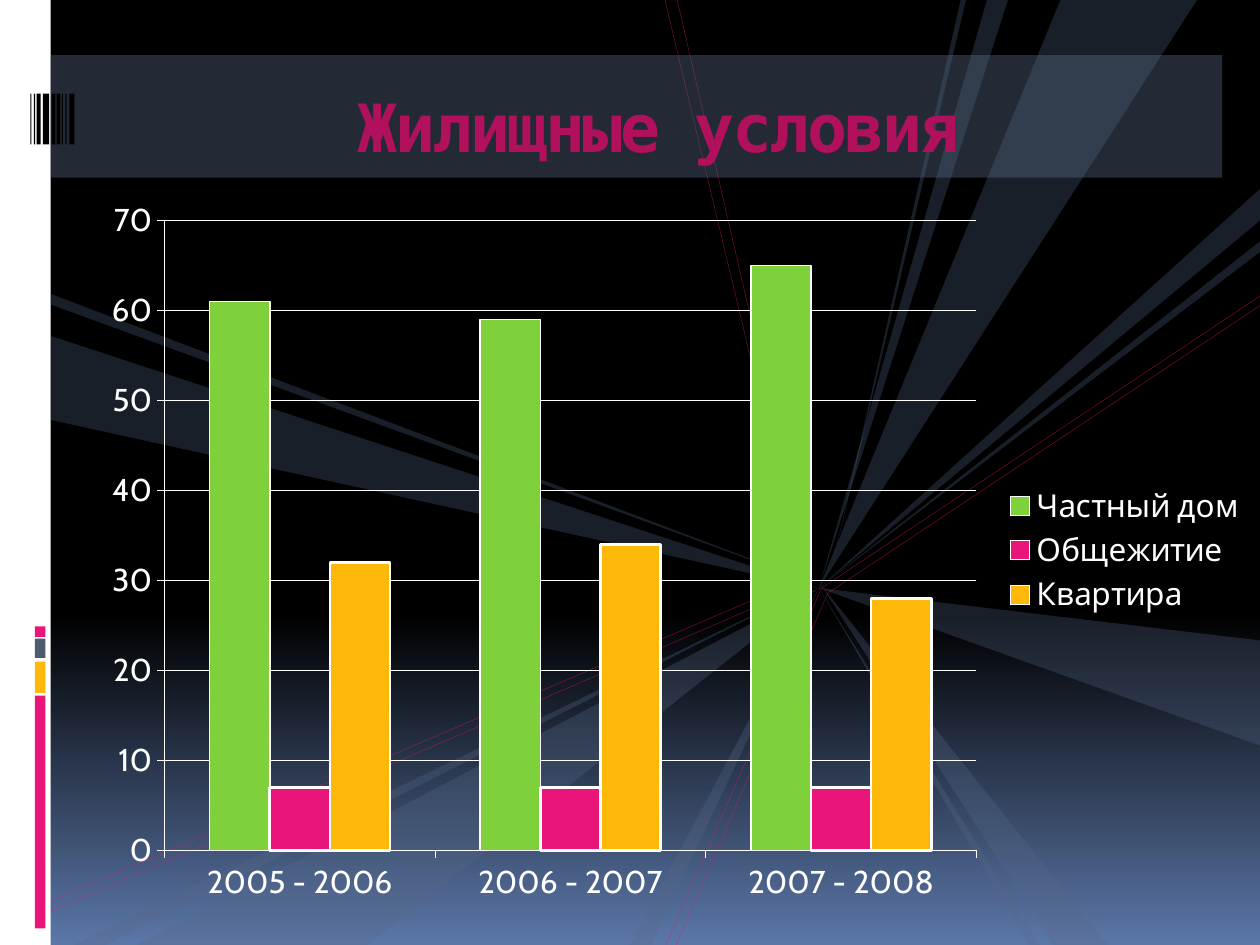
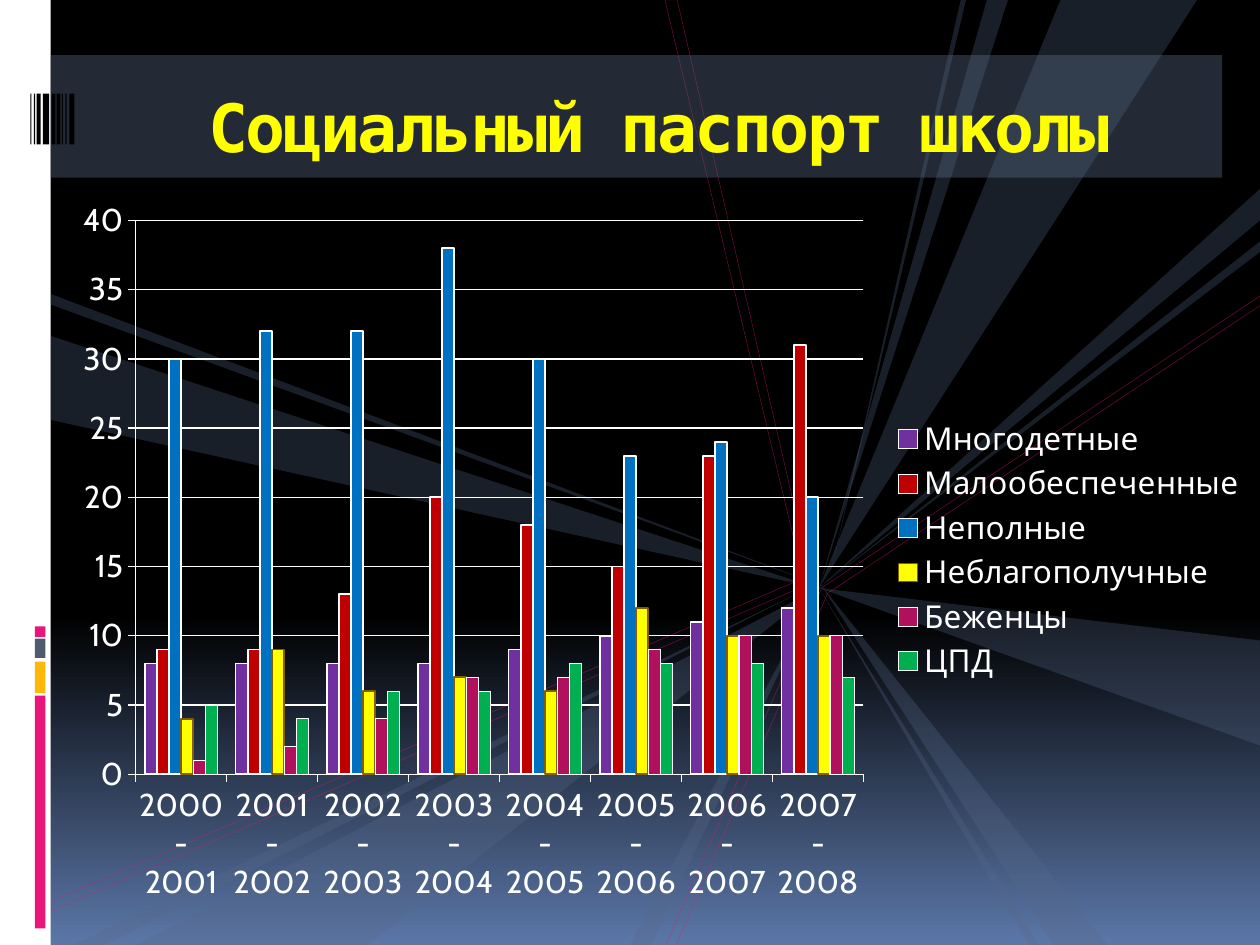
from copy import deepcopy

from pptx import Presentation
from pptx.chart.data import CategoryChartData
from pptx.dml.color import RGBColor
from pptx.enum.chart import XL_CHART_TYPE, XL_LEGEND_POSITION, XL_TICK_MARK
from pptx.enum.shapes import MSO_SHAPE
from pptx.enum.text import MSO_ANCHOR, PP_ALIGN
from pptx.oxml import parse_xml
from pptx.oxml.ns import nsdecls, qn
from pptx.util import Pt

WHITE, BLACK, PINK, AMBER = "FFFFFF", "000000", "EA157A", "FEB80A"
SLATE, SKY, RAY, BAND = "4E5B6F", "5B77A8", "566989", "586A86"
BERRY, YELLOW = "B0105C", "FFFF00"
CENTRE = (468, 336)

# left, top, width, height, colour
SIDE_BARS = [
    (0, 0, 29, 540, WHITE),
    (20, 397.5, 6, 133, PINK),
    (20, 378, 6, 18, AMBER),
    (20, 365, 6, 11, SLATE),
    (20, 358, 6, 6, PINK),
]
# left, width
BARCODE = [(17.3, 0.7), (19.4, 0.7), (21, 2.2), (24.5, 3.6), (29.5, 2.2),
           (32.4, 2.2), (35.3, 0.7), (37.4, 0.7), (39.6, 3)]
OUTLINES = [
    [(380, 541), (469.5, 336), (721, 168.5), (721, 174), (473, 339), (386, 541)],
    [(29.5, 515), (29.5, 520.5), (464, 333), (387, 0), (380, 0), (459, 330.5)],
]
# tip near the centre, then the two outer corners
RAYS = [
    ((474.5, 328), (552, 0), (549, 0)),
    (CENTRE, (606, 0), (684, 0)),
    (CENTRE, (720, 366), (720, 426)),
    (CENTRE, (576, 0), (564, 0)),
    ((469, 334), (602, 540), (633, 540)),
    (CENTRE, (594, 540), (588, 540)),
    (CENTRE, (720, 108), (720, 126)),
    (CENTRE, (720, 138), (720, 144)),
    (CENTRE, (78, 540), (210, 540)),
    ((462, 336), (42, 540), (60, 540)),
    ((467, 336), (29, 192), (29, 240)),
    ((473, 336), (29, 168), (29, 174)),
    (CENTRE, (360, 540), (372, 540)),
]

# name, values, fill, line colour, line width
HOUSING = [
    ("Частный дом", (61, 59, 65), "7FD13B", WHITE, 1),
    ("Общежитие", (7, 7, 7), PINK, WHITE, 1.5),
    ("Квартира", (32, 34, 28), AMBER, WHITE, 1.5),
]
FAMILIES = [
    ("Многодетные", (8, 8, 8, 8, 9, 10, 11, 12), "7030A0", WHITE, 1),
    ("Малообеспеченные", (9, 9, 13, 20, 18, 15, 23, 31), "C00000", WHITE, 1),
    ("Неполные", (30, 32, 32, 38, 30, 23, 24, 20), "0070C0", WHITE, 1),
    ("Неблагополучные", (4, 9, 6, 7, 6, 12, 10, 10), YELLOW, "835E01", 1),
    ("Беженцы", (1, 2, 4, 7, 7, 9, 10, 10), BERRY, WHITE, 0.75),
    ("ЦПД", (5, 4, 6, 6, 8, 8, 8, 7), "00B050", WHITE, 0.75),
]


def rgb(colour):
    return RGBColor.from_string(colour)


def school_years(first, last):
    return [f"{year} - {year + 1}" for year in range(first, last + 1)]


def set_alpha(sp, percent):
    """Set the opacity of the only colour in the shape."""
    colour = sp.element.spPr.find(".//" + qn("a:srgbClr"))
    colour.append(parse_xml(f'<a:alpha {nsdecls("a")} val="{percent * 1000}"/>'))


class Deck:
    def __init__(self, font="Cabin", title_font="DejaVu Sans Mono"):
        self.prs = Presentation()
        self.prs.slide_width, self.prs.slide_height = Pt(720), Pt(540)
        self.font, self.title_font = font, title_font
        self.slide = None

    def add_slide(self, title, title_colour):
        self.slide = self.prs.slides.add_slide(self.prs.slide_layouts[6])
        self.background()
        for left, top, width, height, colour in SIDE_BARS:
            self.rect(left, top, width, height, colour)
        for points in OUTLINES:
            self.outline(points)
        for points in RAYS:
            self.ray(points)
        set_alpha(self.rect(29, 31.5, 669.5, 70, BAND), 40)
        for left, width in BARCODE:
            self.rect(left, 53.5, width, 29, BLACK)
        self.title(title, title_colour)

    def background(self):
        """Black down to 65 % of the height, then fading to blue."""
        fill = self.slide.background.fill
        fill.gradient()
        fill.gradient_angle = 270
        for stop, colour, position in zip(fill.gradient_stops, (BLACK, SKY), (0.65, 1)):
            stop.color.rgb = rgb(colour)
            stop.position = position
        stops = self.slide.element.find(".//" + qn("a:gsLst"))
        top_stop = deepcopy(stops[0])
        top_stop.set("pos", "0")
        stops.insert(0, top_stop)

    def rect(self, left, top, width, height, colour):
        sp = self.slide.shapes.add_shape(
            MSO_SHAPE.RECTANGLE, Pt(left), Pt(top), Pt(width), Pt(height))
        sp.shadow.inherit = False
        sp.fill.solid()
        sp.fill.fore_color.rgb = rgb(colour)
        sp.line.fill.background()
        return sp

    def polygon(self, points):
        start, *rest = [(Pt(x), Pt(y)) for x, y in points]
        builder = self.slide.shapes.build_freeform(*start)
        builder.add_line_segments(rest, close=True)
        sp = builder.convert_to_shape()
        sp.shadow.inherit = False
        return sp

    def ray(self, points):
        sp = self.polygon(points)
        sp.fill.solid()
        sp.fill.fore_color.rgb = rgb(RAY)
        sp.line.fill.background()
        set_alpha(sp, 30)

    def outline(self, points):
        sp = self.polygon(points)
        sp.fill.background()
        sp.line.color.rgb = rgb(PINK)
        sp.line.width = Pt(0.25)
        set_alpha(sp, 53)

    def title(self, text, colour):
        tf = self.slide.shapes.add_textbox(Pt(55.5), Pt(40.5), Pt(642), Pt(61)).text_frame
        tf.word_wrap = True
        tf.vertical_anchor = MSO_ANCHOR.MIDDLE
        tf.margin_top, tf.margin_bottom = Pt(5), Pt(3.6)
        tf.text = text
        p = tf.paragraphs[0]
        p.alignment = PP_ALIGN.CENTER
        r = p.runs[0]
        r.font.name, r.font.size, r.font.bold = self.title_font, Pt(38), True
        r.font.color.rgb = rgb(colour)
        r._r.get_or_add_rPr().set("spc", "-150")

    def column_chart(self, left, years, series, maximum, step, plot):
        """plot is the inner plot area on the slide: left, top, width, height."""
        top, width, height = 106.5, 720 - left, 416
        data = CategoryChartData()
        data.categories = years
        for name, values, *_ in series:
            data.add_series(name, values)
        chart = self.slide.shapes.add_chart(
            XL_CHART_TYPE.COLUMN_CLUSTERED,
            Pt(left), Pt(top), Pt(width), Pt(height), data).chart
        chart.has_title = False
        chart.font.name, chart.font.size = self.font, Pt(18)
        chart.font.color.rgb = rgb(WHITE)
        chart.has_legend = True
        chart.legend.position = XL_LEGEND_POSITION.RIGHT
        chart.legend.include_in_layout = False

        columns = chart.plots[0]
        columns.gap_width, columns.overlap = 150, 0
        columns.vary_by_categories = False
        for ser, (_, _, fill, line, line_width) in zip(columns.series, series):
            ser.format.fill.solid()
            ser.format.fill.fore_color.rgb = rgb(fill)
            ser.format.line.color.rgb = rgb(line)
            ser.format.line.width = Pt(line_width)

        values = chart.value_axis
        values.minimum_scale, values.maximum_scale, values.major_unit = 0, maximum, step
        values.has_major_gridlines = True
        for axis in (chart.category_axis, values):
            axis.major_tick_mark = XL_TICK_MARK.OUTSIDE
            axis.minor_tick_mark = XL_TICK_MARK.NONE
        for ruled in (chart.category_axis, values, values.major_gridlines):
            ruled.format.line.color.rgb = rgb(WHITE)
            ruled.format.line.width = Pt(0.75)
        self.place_plot(chart, (left, top, width, height), plot)

    def place_plot(self, chart, frame, plot):
        left, top, width, height = frame
        shares = {"x": (plot[0] - left) / width, "y": (plot[1] - top) / height,
                  "w": plot[2] / width, "h": plot[3] / height}
        modes = "".join(f'<c:{key}Mode val="edge"/>' for key in "xy")
        sizes = "".join(f'<c:{key} val="{share:.4f}"/>' for key, share in shares.items())
        layout = parse_xml(
            f'<c:layout {nsdecls("c")}><c:manualLayout><c:layoutTarget val="inner"/>'
            f"{modes}{sizes}</c:manualLayout></c:layout>")
        area = chart.element.find(".//" + qn("c:plotArea"))
        for old in area.findall(qn("c:layout")):
            area.remove(old)
        area.insert(0, layout)


def main():
    deck = Deck()
    deck.add_slide("Жилищные условия", BERRY)
    deck.column_chart(50.5, school_years(2005, 2007), HOUSING, 70, 10,
                      plot=(94, 126, 464, 360))
    deck.add_slide("Социальный паспорт школы", YELLOW)
    deck.column_chart(34, school_years(2000, 2007), FAMILIES, 40, 5,
                      plot=(77.5, 126, 416, 316.5))
    deck.prs.save("out.pptx")


if __name__ == "__main__":
    main()
